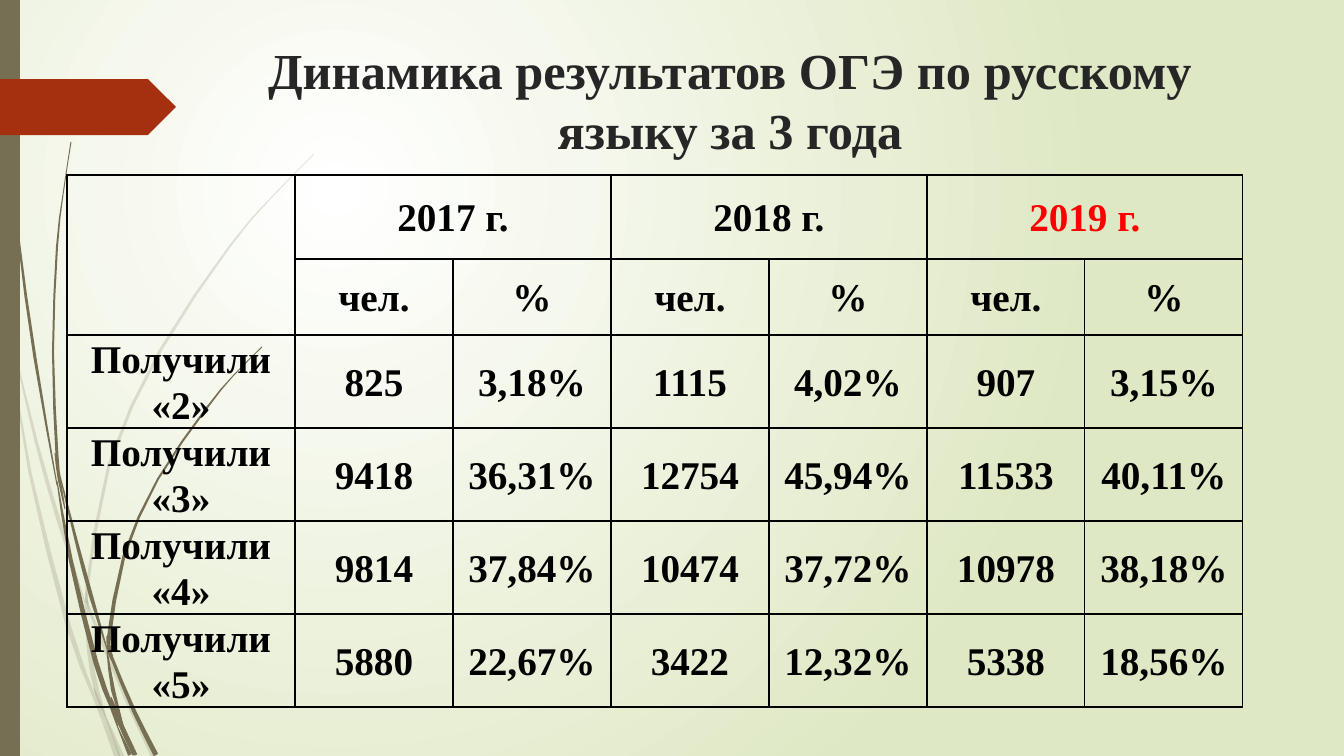
from math import hypot
from lxml import etree
from pptx import Presentation
from pptx.dml.color import RGBColor
from pptx.enum.shapes import MSO_SHAPE
from pptx.enum.text import MSO_ANCHOR, MSO_AUTO_SIZE, PP_ALIGN
from pptx.oxml import parse_xml
from pptx.oxml.ns import nsdecls, qn
from pptx.util import Pt

PX = 914400 / 100.8
FONT = "Times New Roman"
OLIVE, RUST, BLACK, RED = "766F54", "A53010", "000000", "FF0000"


def px(length):
    return round(length * PX)


def paint(target, color):
    target.solid()
    target.fore_color.rgb = RGBColor.from_string(color)


presentation = Presentation()
presentation.slide_width, presentation.slide_height = px(1344), px(756)
slide = presentation.slides.add_slide(presentation.slide_layouts[5])

slide.background.fill.solid()
solid = slide.background.element.find(".//" + qn("a:solidFill"))
solid.getparent().replace(solid, parse_xml(
    f'<a:gradFill {nsdecls("a")} rotWithShape="1"><a:gsLst>'
    '<a:gs pos="0"><a:srgbClr val="FFFFFF"/></a:gs>'
    '<a:gs pos="100000"><a:srgbClr val="DFE8C4"/></a:gs></a:gsLst>'
    '<a:path path="circle"><a:fillToRect l="50000" t="50000" r="100000" b="100000"/></a:path>'
    '</a:gradFill>'))

pale_blades = [
    [(0, 290, 4), (9, 334, 2), (11, 353, 1)],
    [(14, 348, 1), (36, 441, 3), (60, 525, 4), (85, 603, 1)],
    [(88, 601, 1), (91, 614, 3), (126, 698, 4), (154, 757, 5)],
    [(106, 717, 1), (122, 757, 5)],
    [(11, 353, 1), (30, 473, 3), (68, 625, 5), (93, 694, 3), (102, 720, 1)],
    [(85, 604, 1), (89, 651, 4), (97, 692, 5), (106, 717, 1)],
    [(314, 154, 1), (270, 199, 1), (230, 246, 2), (160, 351, 3), (109, 465, 3),
     (87, 589, 3), (88, 601, 1)],
    [(102, 720, 1), (117, 757, 5)],
    [(86, 591, 1), (87, 603, 3), (88, 615, 1)],
    [(94, 688, 1), (104, 717, 4), (120, 757, 1)],
]
dark_blades = [
    [(4, 0, 1), (5, 48, 1), (8, 111, 1), (18, 234, 2), (35, 358, 3), (57, 485, 1)],
    [(60, 476, 1), (76, 540, 3), (91, 596, 4), (107, 649, 1)],
    [(111, 646, 1), (112, 658, 3), (135, 713, 4), (156, 755, 5)],
    [(57, 481, 1), (71, 561, 4), (96, 663, 5), (111, 705, 4), (118, 728, 1)],
    [(71, 142, 1), (63, 195, 1), (57, 247, 2), (53, 352, 2), (57, 455, 3), (60, 476, 1)],
    [(123, 725, 1), (136, 755, 3)],
    [(55, 453, 1), (59, 478, 3), (65, 509, 1)],
    [(262, 347, 1), (233, 376, 1), (206, 409, 2), (158, 479, 2), (124, 556, 3),
     (109, 637, 4), (111, 646, 1)],
    [(118, 728, 1), (130, 755, 4)],
    [(107, 650, 1), (113, 690, 4), (123, 725, 1)],
    [(107, 636, 1), (109, 650, 4), (112, 661, 1)],
    [(111, 697, 1), (118, 718, 5), (134, 755, 3)],
]
for opacity, spines in ((20, pale_blades), (100, dark_blades)):
    for spine in spines:
        padded = [spine[0], *spine, spine[-1]]
        curve = []
        for before, start, end, after in zip(padded, padded[1:], padded[2:], padded[3:]):
            middle = [(9 * (b + c) - a - d) / 16 for a, b, c, d in zip(before, start, end, after)]
            curve += [start, middle]
        curve.append(spine[-1])
        left_edge, right_edge = [], []
        for index, (x, y, width) in enumerate(curve):
            behind, ahead = curve[max(index - 1, 0)], curve[min(index + 1, len(curve) - 1)]
            dx, dy = ahead[0] - behind[0], ahead[1] - behind[1]
            half = width / 2 / hypot(dx, dy)
            left_edge.append((px(x - dy * half), px(y + dx * half)))
            right_edge.append((px(x + dy * half), px(y - dx * half)))
        outline = left_edge + right_edge[::-1]
        builder = slide.shapes.build_freeform(*outline[0])
        builder.add_line_segments(outline[1:], close=True)
        blade = builder.convert_to_shape()
        blade.shadow.inherit = False
        paint(blade.fill, OLIVE)
        blade.line.fill.background()
        if opacity < 100:
            color_node = blade.element.spPr.find(qn("a:solidFill"))[0]
            etree.SubElement(color_node, qn("a:alpha"), val=str(opacity * 1000))

for preset, box, color in [
    (MSO_SHAPE.RECTANGLE, (0, 0, 20, 756), OLIVE),
    (MSO_SHAPE.PENTAGON, (0, 79, 176, 56), RUST),
]:
    shape = slide.shapes.add_shape(preset, *map(px, box))
    shape.shadow.inherit = False
    paint(shape.fill, color)
    shape.line.fill.background()

title = slide.shapes.title
slide.shapes.element.append(title.element)
title.left, title.top, title.width, title.height = map(px, (200, 34, 1060, 141))
frame = title.text_frame
frame.text = "Динамика результатов ОГЭ по русскому языку за 3 года"
frame.word_wrap = True
frame.auto_size = MSO_AUTO_SIZE.NONE
frame.vertical_anchor = MSO_ANCHOR.TOP
frame.paragraphs[0].alignment = PP_ALIGN.CENTER
font = frame.paragraphs[0].runs[0].font
font.name, font.size, font.bold = FONT, Pt(36), True
paint(font.fill, "262626")

rows = [
    ["", "2017 г.", "", "2018 г.", "", "2019 г.", ""],
    [""] + ["чел.", "%"] * 3,
    ["Получили «2»", "825", "3,18%", "1115", "4,02%", "907", "3,15%"],
    ["Получили «3»", "9418", "36,31%", "12754", "45,94%", "11533", "40,11%"],
    ["Получили «4»", "9814", "37,84%", "10474", "37,72%", "10978", "38,18%"],
    ["Получили «5»", "5880", "22,67%", "3422", "12,32%", "5338", "18,56%"],
]
column_widths = [228] + [158] * 6
row_heights = [84, 76] + [93] * 4
table = slide.shapes.add_table(
    len(rows), len(column_widths), px(67), px(175),
    px(sum(column_widths)), px(sum(row_heights))).table
table.first_row = table.horz_banding = False
for column, width in zip(table.columns, column_widths):
    column.width = px(width)
for row, height in zip(table.rows, row_heights):
    row.height = px(height)
table.cell(0, 0).merge(table.cell(1, 0))
for column_index in (1, 3, 5):
    table.cell(0, column_index).merge(table.cell(0, column_index + 1))

for row_index, values in enumerate(rows):
    for column_index, value in enumerate(values):
        cell = table.cell(row_index, column_index)
        cell.margin_left = cell.margin_right = px(7)
        cell.margin_top = cell.margin_bottom = 0
        cell.vertical_anchor = MSO_ANCHOR.MIDDLE
        properties = cell._tc.get_or_add_tcPr()
        for side in ("lnL", "lnR", "lnT", "lnB"):
            properties.append(parse_xml(
                f'<a:{side} {nsdecls("a")} w="12700"><a:solidFill>'
                f'<a:srgbClr val="{BLACK}"/></a:solidFill></a:{side}>'))
        cell.fill.background()
        if not value:
            continue
        cell.text_frame.text = value
        paragraph = cell.text_frame.paragraphs[0]
        paragraph.alignment = PP_ALIGN.CENTER
        paragraph.line_spacing = 1.07
        font = paragraph.runs[0].font
        font.name, font.size, font.bold = FONT, Pt(28), True
        paint(font.fill, RED if value == "2019 г." else BLACK)

presentation.save("out.pptx")
